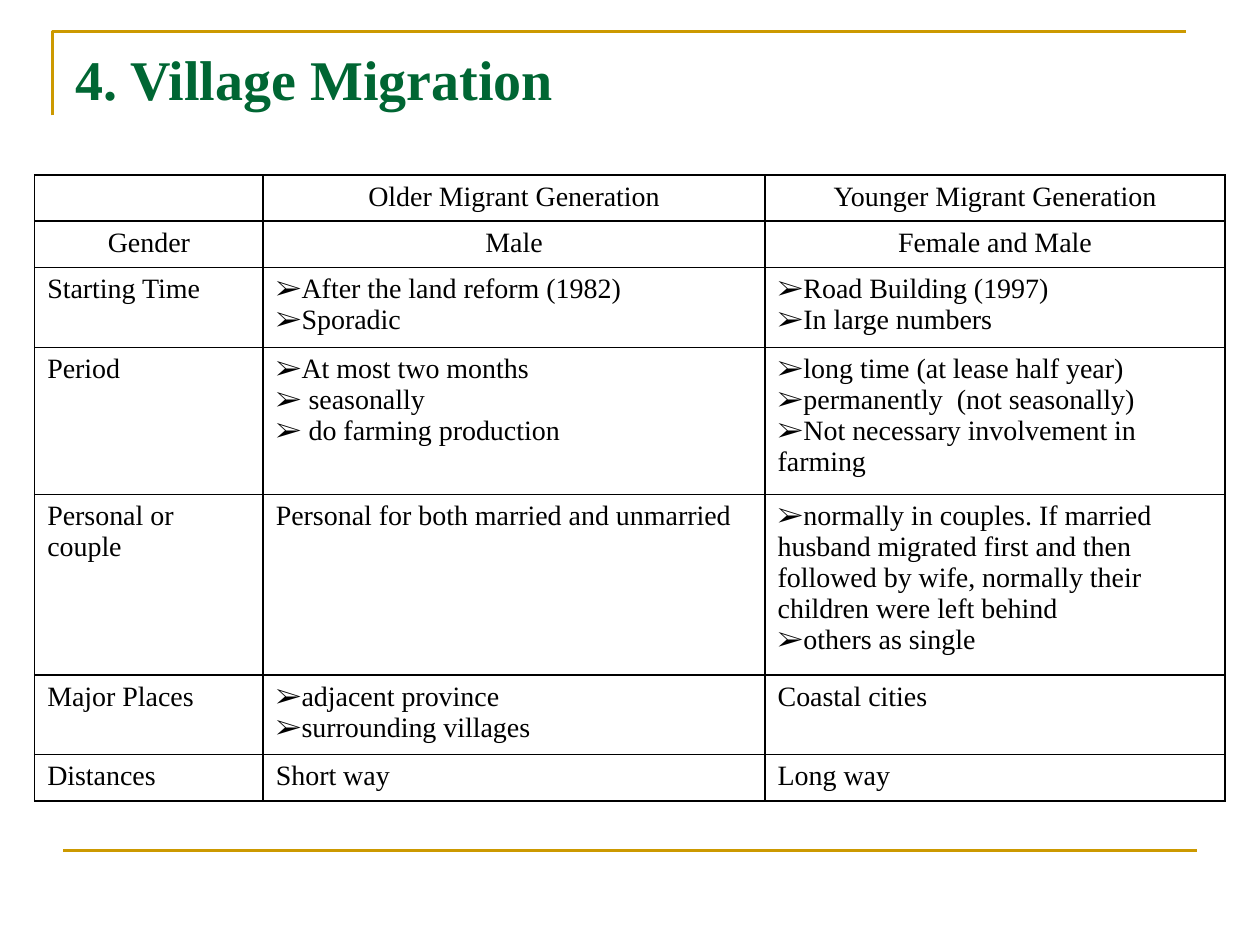
from dataclasses import dataclass

from lxml import etree
from pptx import Presentation
from pptx.dml.color import RGBColor
from pptx.enum.shapes import MSO_CONNECTOR
from pptx.enum.text import MSO_ANCHOR, PP_ALIGN
from pptx.oxml.ns import qn
from pptx.util import Pt

STRAIGHT = MSO_CONNECTOR.STRAIGHT
TOP = MSO_ANCHOR.TOP
LEFT, CENTER = PP_ALIGN.LEFT, PP_ALIGN.CENTER

GOLD, GREEN, BLACK, WHITE = "CC9900", "006633", "000000", "FFFFFF"
FONT = "Times New Roman"
TITLE_FORMAT = {"name": FONT, "size": Pt(32), "bold": True}
CELL_FORMAT = {"name": FONT, "size": Pt(16), "bold": False}
MARGINS = {"margin_left": Pt(7.2), "margin_right": Pt(7.2),
           "margin_top": Pt(3.6), "margin_bottom": Pt(3.6)}
BULLET = "➢"
COLUMN_WIDTHS = (130.6, 286.8, 262.8)


@dataclass(frozen=True)
class Entry:
    """Text of one cell: a paragraph for each line."""
    lines: tuple[str, ...] = ()
    bulleted: bool = False
    align: PP_ALIGN = LEFT


@dataclass(frozen=True)
class Row:
    height: float
    entries: tuple[Entry, Entry, Entry]


def plain(text: str) -> Entry:
    return Entry((text,))


def centered(text: str) -> Entry:
    return Entry((text,), align=CENTER)


def bullets(*lines: str) -> Entry:
    return Entry(lines, bulleted=True)


ROWS = (
    Row(26.3, (Entry(), centered("Older Migrant Generation"),
               centered("Younger Migrant Generation"))),
    Row(26.3, (centered("Gender"), centered("Male"), centered("Female and Male"))),
    Row(45.6, (plain("Starting Time"),
               bullets("After the land reform (1982)", "Sporadic"),
               bullets("Road Building (1997)", "In large numbers"))),
    Row(84, (plain("Period"),
             bullets("At most two months", " seasonally", " do farming production"),
             bullets("long time (at lease half year)",
                     "permanently  (not seasonally)",
                     "Not necessary involvement in farming"))),
    Row(103, (plain("Personal or couple"),
              plain("Personal for both married and unmarried"),
              bullets("normally in couples. If married husband migrated first "
                      "and then followed by wife, normally their children "
                      "were left behind",
                      "others as single"))),
    Row(45.6, (plain("Major Places"),
               bullets("adjacent province", "surrounding villages"),
               plain("Coastal cities"))),
    Row(26.4, (plain("Distances"), plain("Short way"), plain("Long way"))),
)


def rgb(value: str) -> RGBColor:
    return RGBColor.from_string(value)


def apply(target, values: dict) -> None:
    for name, value in values.items():
        setattr(target, name, value)


def write(paragraph, text: str, values: dict, color: str) -> None:
    run = paragraph.add_run()
    run.text = text
    apply(run.font, values)
    run.font.color.rgb = rgb(color)


def style_rule(line) -> None:
    line.color.rgb = rgb(GOLD)
    line.width = Pt(1.5)


def add_bullet(paragraph) -> None:
    properties = paragraph._p.get_or_add_pPr()
    for name in ("marL", "indent"):
        properties.set(name, "0")
    etree.SubElement(properties, qn("a:buFont"), typeface=FONT)
    etree.SubElement(properties, qn("a:buChar"), char=BULLET)


def add_borders(cell) -> None:
    properties = cell._tc.get_or_add_tcPr()
    for position, side in enumerate(("a:lnL", "a:lnR", "a:lnT", "a:lnB")):
        border = etree.Element(qn(side), w=str(Pt(1)))
        fill = etree.SubElement(border, qn("a:solidFill"))
        etree.SubElement(fill, qn("a:srgbClr"), val=BLACK)
        properties.insert(position, border)


def fill_cell(cell, entry: Entry) -> None:
    apply(cell, {**MARGINS, "vertical_anchor": TOP})
    cell.fill.solid()
    cell.fill.fore_color.rgb = rgb(WHITE)
    add_borders(cell)
    frame = cell.text_frame
    if not entry.lines:
        # Keeps the empty cell from stretching its row
        etree.SubElement(frame.paragraphs[0]._p, qn("a:endParaRPr"), sz="1600")
    for index, text in enumerate(entry.lines):
        paragraph = frame.add_paragraph() if index else frame.paragraphs[0]
        paragraph.alignment = entry.align
        if entry.bulleted:
            add_bullet(paragraph)
        write(paragraph, text, CELL_FORMAT, BLACK)


def add_frame_lines(slide) -> None:
    # Corner around the title
    builder = slide.shapes.build_freeform(Pt(30), Pt(66))
    builder.add_line_segments([(Pt(30), Pt(18)), (Pt(678), Pt(18))], close=False)
    corner = builder.convert_to_shape()
    corner.shadow.inherit = False
    corner.fill.background()
    style_rule(corner.line)
    # Rule at the foot
    footer = slide.shapes.add_connector(STRAIGHT, Pt(36), Pt(486), Pt(684), Pt(486))
    style_rule(footer.line)
    etree.SubElement(footer._element.spPr, qn("a:effectLst"))


def add_title(slide, text: str) -> None:
    frame = slide.shapes.add_textbox(Pt(36), Pt(21.6), Pt(648), Pt(90)).text_frame
    apply(frame, {**MARGINS, "word_wrap": True, "vertical_anchor": TOP})
    write(frame.paragraphs[0], text, TITLE_FORMAT, GREEN)


def add_migration_table(slide) -> None:
    table = slide.shapes.add_table(
        len(ROWS), len(COLUMN_WIDTHS), Pt(19.8), Pt(100),
        Pt(sum(COLUMN_WIDTHS)), Pt(sum(row.height for row in ROWS))).table
    apply(table, {"first_row": False, "horz_banding": False})
    for column, width in zip(table.columns, COLUMN_WIDTHS):
        column.width = Pt(width)
    for table_row, row in zip(table.rows, ROWS):
        table_row.height = Pt(row.height)
        for cell, entry in zip(table_row.cells, row.entries):
            fill_cell(cell, entry)


def main() -> None:
    deck = Presentation()
    apply(deck, {"slide_width": Pt(720), "slide_height": Pt(540)})
    slide = deck.slides.add_slide(deck.slide_layouts[6])
    add_frame_lines(slide)
    add_title(slide, "4. Village Migration")
    add_migration_table(slide)
    deck.save("out.pptx")


if __name__ == "__main__":
    main()
